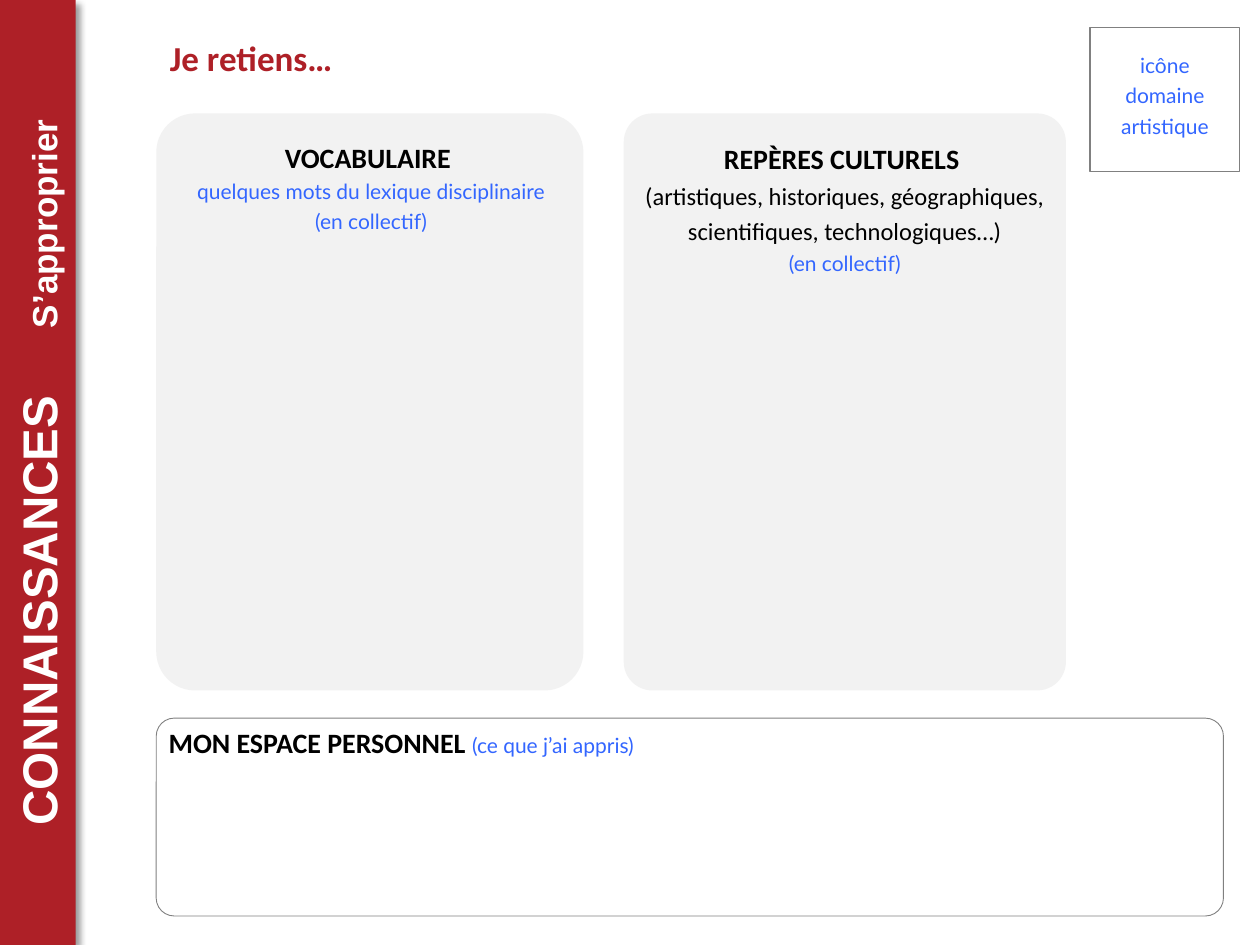
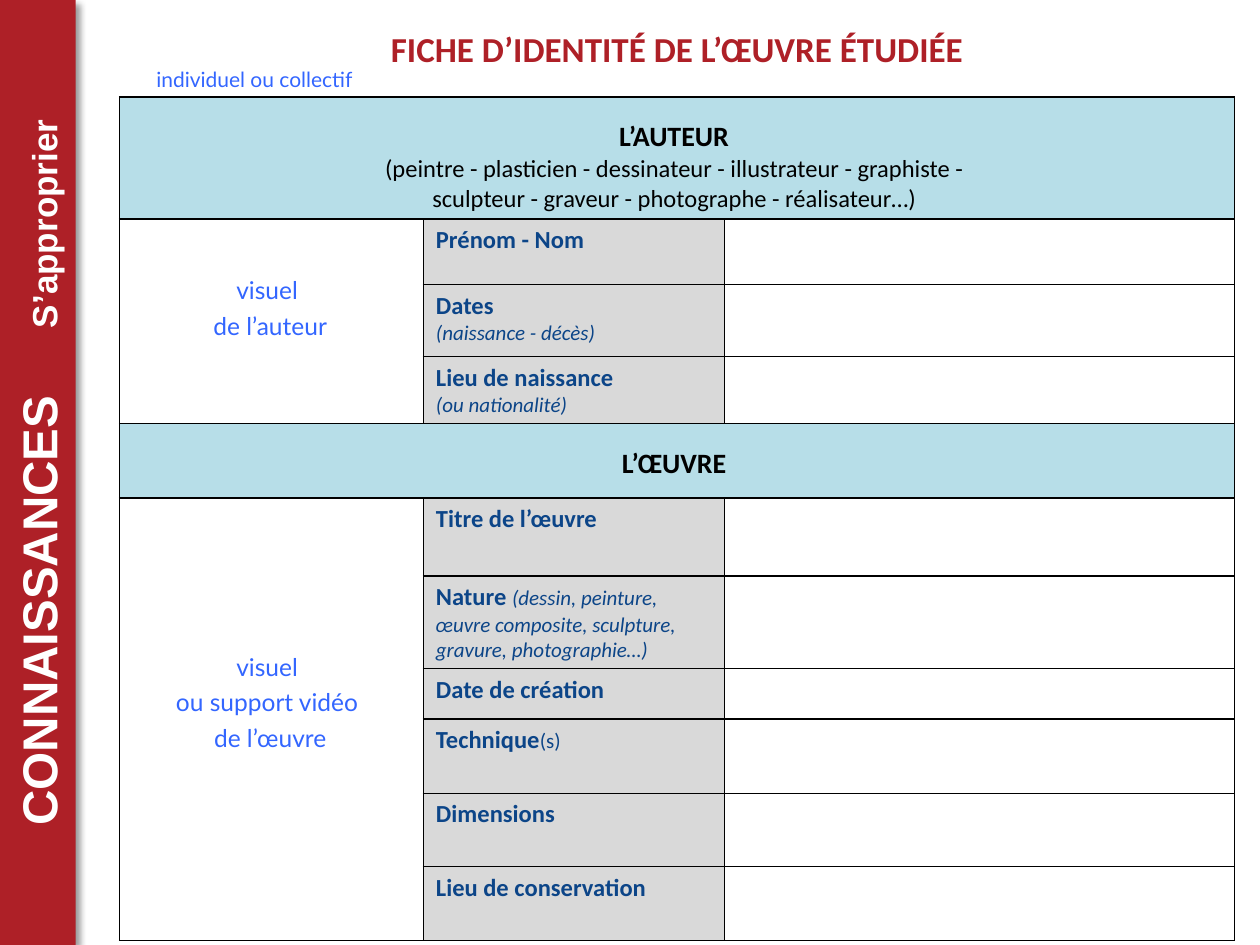
from lxml import etree
from pptx import Presentation
from pptx.dml.color import RGBColor
from pptx.enum.shapes import MSO_SHAPE
from pptx.enum.text import MSO_ANCHOR, PP_ALIGN
from pptx.oxml import parse_xml
from pptx.oxml.ns import nsdecls, qn
from pptx.util import Inches, Pt

RECTANGLE, ROUNDED = MSO_SHAPE.RECTANGLE, MSO_SHAPE.ROUNDED_RECTANGLE
LEFT, CENTER, MIDDLE = PP_ALIGN.LEFT, PP_ALIGN.CENTER, MSO_ANCHOR.MIDDLE

RED = RGBColor(0xAE, 0x20, 0x27)
HINT_BLUE = RGBColor(0x33, 0x66, 0xFF)
LABEL_BLUE = RGBColor(0x0C, 0x45, 0x88)
HEADER_BLUE = RGBColor(0xB7, 0xDE, 0xE8)
LABEL_GREY = RGBColor(0xD9, 0xD9, 0xD9)
CARD_GREY = RGBColor(0xF2, 0xF2, 0xF2)
LINE_GREY = RGBColor(0x80, 0x80, 0x80)
BLACK = RGBColor(0, 0, 0)
WHITE = RGBColor(0xFF, 0xFF, 0xFF)

# The slide is a grid of 100 columns and 75 rows
COLUMNS, ROWS = 100, 75
CELL = Inches(0.1)

TITLE = dict(size=20, color=RED, bold=True)
HEADING = dict(size=16, bold=True)
HINT = dict(size=12, font="Lato", color=HINT_BLUE)
LABEL = dict(size=14, color=LABEL_BLUE, bold=True)
DETAIL = dict(size=12, color=LABEL_BLUE, italic=True)


def grid(*cells):
    return [round(cell * CELL) for cell in cells]


def write(frame, text, size=14, font="Calibri", color=BLACK, bold=False,
          italic=False, align=LEFT, spacing=None, same_line=False):
    frame.word_wrap = True
    paragraph = frame.paragraphs[-1]
    if paragraph.runs and not same_line:
        paragraph = frame.add_paragraph()
    if not same_line:
        paragraph.alignment = align
        paragraph.line_spacing = spacing
    run = paragraph.add_run()
    run.text = text
    run.font.size, run.font.name = Pt(size), font
    run.font.bold, run.font.italic = bold, italic
    run.font.color.rgb = color
    return run


prs = Presentation()
prs.slide_width, prs.slide_height = grid(COLUMNS, ROWS)
knowledge, identity = [prs.slides.add_slide(prs.slide_layouts[6]) for _ in range(2)]

# Shared side band with its shadow and vertical title
for slide in (knowledge, identity):
    band = slide.shapes.add_shape(RECTANGLE, *grid(0, 0, 6, ROWS))
    band.fill.solid()
    band.fill.fore_color.rgb = RED
    band.line.fill.background()
    band._element.spPr.append(parse_xml(
        f'<a:effectLst {nsdecls("a")}><a:outerShdw blurRad="50800" dist="38100" '
        'dir="2700000" algn="tl" rotWithShape="0"><a:srgbClr val="000000">'
        '<a:alpha val="40000"/></a:srgbClr></a:outerShdw></a:effectLst>'))
    band_title = band.text_frame
    band_title.vertical_anchor = MIDDLE
    band_title._txBody.bodyPr.set("vert", "vert270")
    band_style = dict(font="Arial", color=WHITE, bold=True)
    write(band_title, "CONNAISSANCES", size=28, align=CENTER, **band_style)
    gap = write(band_title, " ", size=28, same_line=True, **band_style)
    gap.font._element.set("spc", "3100")
    write(band_title, "S’approprier", size=20, same_line=True, **band_style)

# Slide 1: title
title = knowledge.shapes.add_textbox(*grid(12.5, 2.4, 33.7, 4.4)).text_frame
write(title, "Je retiens…", **TITLE)

# Slide 1: panels (place, corner, fill, line width)
panels = [
    ((86.5, 2.2, 11.9, 11.4), None, None, 0.75),
    ((12.4, 9, 33.9, 45.8), 0.091, CARD_GREY, None),
    ((49.5, 9, 35.1, 45.8), 0.065, CARD_GREY, None),
    ((12.4, 57, 84.7, 15.7), 0.091, WHITE, 0.5),
]
for place, corner, fill, line_width in panels:
    panel = knowledge.shapes.add_shape(ROUNDED if corner else RECTANGLE, *grid(*place))
    panel.shadow.inherit = False
    if corner:
        panel.adjustments[0] = corner
    if fill:
        panel.fill.solid()
        panel.fill.fore_color.rgb = fill
    else:
        panel.fill.background()
    if line_width:
        panel.line.color.rgb = LINE_GREY
        panel.line.width = Pt(line_width)
    else:
        panel.line.fill.background()

# Centred texts of both slides are set after the identity table
centred_texts = [
    (knowledge, (86.5, 3.3, 11.9, 8.2), [("icône domaine artistique", HINT)]),
    (knowledge, (12.5, 10.1, 33.9, 9), [
        ("VOCABULAIRE ", HEADING),
        ("quelques mots du lexique disciplinaire", HINT),
        ("(en collectif)", HINT)]),
    (knowledge, (49.5, 10.2, 35.1, 12.3), [
        ("REPÈRES CULTURELS ", HEADING),
        ("(artistiques, historiques, géographiques, scientifiques, technologiques…)", {}),
        ("(en collectif)", HINT)]),
    (identity, (9.5, 20.9, 23.9, 6.6), [
        ("visuel ", HINT | dict(size=14)), ("de l’auteur", HINT | dict(size=14))]),
    (identity, (9.5, 50.8, 23.9, 9.4), [
        (line, HINT | dict(size=14))
        for line in ("visuel ", "ou support vidéo ", "de l’œuvre")]),
    (identity, (9.5, 4.4, 21.4, 3.4), [("individuel ou collectif", HINT)]),
]

# Slide 1: personal space
personal = knowledge.shapes.add_textbox(*grid(12.4, 57.1, 84.5, 3.7)).text_frame
write(personal, "MON ESPACE PERSONNEL ", **HEADING)
write(personal, "(ce que j’ai appris)", same_line=True, **HINT)

# Slide 2: identity table
column_widths = [24.1, 23.9, 40.5]
row_heights = [9.7, 5.2, 5.7, 5.3, 5.9, 6.2, 7.3, 4, 5.9, 5.8, 5.9]
table = identity.shapes.add_table(
    len(row_heights), len(column_widths),
    *grid(9.5, 7.7, sum(column_widths), sum(row_heights))).table
table.first_row = table.horz_banding = False
for column, width in zip(table.columns, grid(*column_widths)):
    column.width = width
for row, height in zip(table.rows, grid(*row_heights)):
    row.height = height

sections = {
    0: ["L’AUTEUR ",
        "(peintre - plasticien - dessinateur - illustrateur - graphiste - ",
        "sculpteur - graveur - photographe - réalisateur…) "],
    4: ["L’ŒUVRE "],
}
# Row: label, detail, whether the detail stays on the label's line, italic
labels = {
    1: ("Prénom - Nom", "", False, True),
    2: ("Dates", "(naissance - décès)", False, True),
    3: ("Lieu de naissance", "(ou nationalité)", False, True),
    5: ("Titre de l’œuvre", "", False, True),
    6: ("Nature ", "(dessin, peinture, œuvre composite, sculpture, gravure, photographie…)",
        True, True),
    7: ("Date de création", "", False, True),
    8: ("Technique", "(s)", True, False),
    9: ("Dimensions", "", False, True),
    10: ("Lieu de conservation", "", False, True),
}

# Borders and fills
for r in range(len(row_heights)):
    for c in range(len(column_widths)):
        cell = table.cell(r, c)
        properties = cell._tc.get_or_add_tcPr()
        for side in ("lnL", "lnR", "lnT", "lnB"):
            border = etree.SubElement(properties, qn(f"a:{side}"), w=str(Pt(1)))
            solid = etree.SubElement(border, qn("a:solidFill"))
            etree.SubElement(solid, qn("a:srgbClr"), val=str(BLACK))
        cell.fill.solid()
        cell.fill.fore_color.rgb = (
            HEADER_BLUE if r in sections else LABEL_GREY if c == 1 else WHITE)

# Section headers, and the merged image cell under each
for r, lines in sections.items():
    header = table.cell(r, 0)
    header.merge(table.cell(r, 2))
    header.margin_top = Inches(0.18)
    for i, line in enumerate(lines):
        write(header.text_frame, line, align=CENTER, **(HEADING if i == 0 else {}))
for first, last in ((1, 3), (5, 10)):
    table.cell(first, 0).merge(table.cell(last, 0))

# Row labels
for r, (label, detail, same_line, italic) in labels.items():
    frame = table.cell(r, 1).text_frame
    write(frame, label, **LABEL)
    if detail:
        write(frame, detail, same_line=same_line, **(DETAIL | dict(italic=italic)))

# Slide 2: title
sheet_title = identity.shapes.add_textbox(*grid(9.5, 1.7, 88.5, 4.4)).text_frame
write(sheet_title, "FICHE D’IDENTITÉ DE L’ŒUVRE ÉTUDIÉE", align=CENTER, **TITLE)

# Centred texts
for slide, place, lines in centred_texts:
    frame = slide.shapes.add_textbox(*grid(*place)).text_frame
    for line, style in lines:
        write(frame, line, align=CENTER, spacing=1.2, **style)

prs.save("out.pptx")
